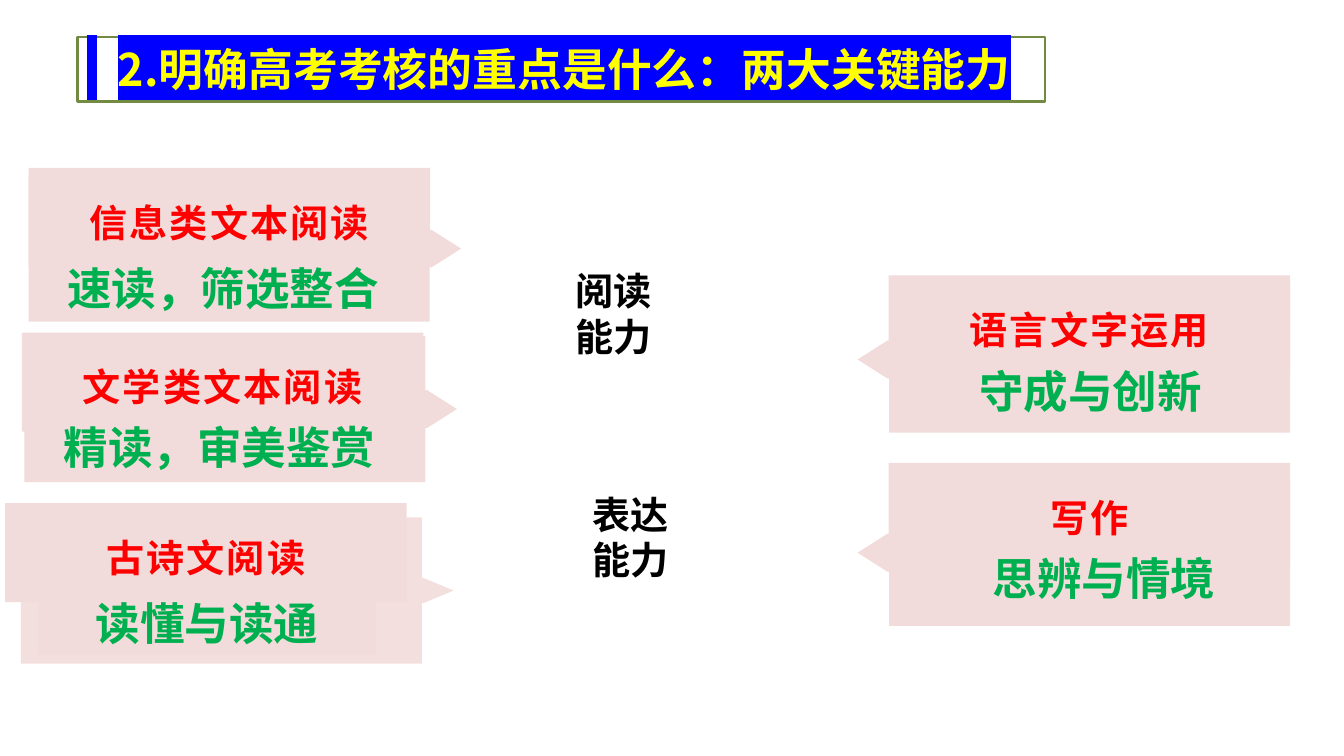
from dataclasses import dataclass

from lxml import etree
from pptx import Presentation
from pptx.dml.color import RGBColor
from pptx.enum.shapes import MSO_SHAPE
from pptx.enum.text import MSO_ANCHOR, MSO_AUTO_SIZE, PP_ALIGN
from pptx.oxml.ns import qn
from pptx.shapes.autoshape import Shape
from pptx.slide import Slide
from pptx.util import Inches, Pt

RECT, OVAL = MSO_SHAPE.RECTANGLE, MSO_SHAPE.OVAL
CALLOUT = MSO_SHAPE.RIGHT_ARROW_CALLOUT
LEFT, CENTER = PP_ALIGN.LEFT, PP_ALIGN.CENTER
TOP, MIDDLE = MSO_ANCHOR.TOP, MSO_ANCHOR.MIDDLE
TITLE_ONLY = 5

# Grid of 160 columns by 90 rows
WIDTH, HEIGHT = Inches(13.33), Inches(7.5)
COL, ROW = WIDTH / 160, HEIGHT / 90

Point = tuple[float, float]


@dataclass(frozen=True)
class Theme:
    font: str = "Noto Sans CJK SC"
    pink: str = "F2DCDB"
    red: str = "FF0000"
    green: str = "00B050"
    black: str = "000000"
    white: str = "FFFFFF"
    yellow: str = "FFFF00"
    blue: str = "0000FF"
    olive: str = "738A42"
    title: float = 32
    skill: float = 31.8
    label: float = 27.2


@dataclass(frozen=True)
class Card:
    """A reading or writing task; points are grid positions."""
    task: str
    skill: str
    arrow: Point
    head: Point
    foot: Point
    flip: bool = False
    align: PP_ALIGN = CENTER
    wing: float = 0.129
    alpha: int = 100


@dataclass(frozen=True)
class Hub:
    text: str
    at: Point


THEME = Theme()
ARROW, HEAD, FOOT, RING = (51.5, 17.4), (47.8, 11.8), (40.1, 7.6), (21.4, 16.6)

CARDS = [
    Card("信息类文本阅读", "速读，筛选整合", (3.4, 20.9), (3.4, 20), (6.8, 30.5),
         align=LEFT),
    Card("文学类文本阅读", "精读，审美鉴赏", (2.9, 40), (2.6, 39.6), (6.4, 49.4),
         align=LEFT),
    Card("古诗文阅读", "读懂与读通", (2.5, 61.6), (0.6, 59.9), (4.6, 70.4),
         wing=0.085, alpha=90),
    Card("语言文字运用", "守成与创新", (102.1, 34.1), (105.8, 32.8), (109.8, 42.8),
         flip=True),
    Card("写作", "思辨与情境", (102.1, 57.1), (105.8, 55.1), (111.4, 65),
         flip=True),
]
HUBS = [Hub("阅读能力", (62.3, 29)), Hub("表达能力", (64.4, 55.6))]


def place(shape: Shape, at: Point, size: Point) -> None:
    shape.left, shape.top = int(at[0] * COL), int(at[1] * ROW)
    shape.width, shape.height = int(size[0] * COL), int(size[1] * ROW)


def draw(slide: Slide, kind: MSO_SHAPE, at: Point, size: Point,
         fill: str | None = None) -> Shape:
    shape = slide.shapes.add_shape(kind, 0, 0, 0, 0)
    place(shape, at, size)
    shape.shadow.inherit = False
    shape.line.fill.background()
    if fill:
        shape.fill.solid()
        shape.fill.fore_color.rgb = RGBColor.from_string(fill)
    else:
        shape.fill.background()
    return shape


def write(shape: Shape, parts: list[str], size: float, color: str,
          align: PP_ALIGN = CENTER, anchor: MSO_ANCHOR = MIDDLE,
          space: float = 0, mark: str = "") -> None:
    """Set one bold paragraph, with letter spacing and a highlight if given."""
    frame = shape.text_frame
    frame.word_wrap, frame.vertical_anchor = True, anchor
    para = frame.paragraphs[0]
    para.alignment = align
    font = para.font
    font.size, font.bold = Pt(size), True
    font.color.rgb = RGBColor.from_string(color)
    props = para._p.get_or_add_pPr().find(qn("a:defRPr"))
    if space:
        props.set("spc", str(int(space * 100)))
    if mark:
        light = etree.SubElement(props, qn("a:highlight"))
        etree.SubElement(light, qn("a:srgbClr"), val=mark)
    for script in ("a:latin", "a:ea"):
        etree.SubElement(props, qn(script), typeface=THEME.font)
    for part in parts:
        para.add_run().text = part


def add_title(slide: Slide) -> None:
    title = slide.shapes.title
    place(title, (9.2, 4.4), (115.2, 7.7))
    title.fill.solid()
    title.fill.fore_color.rgb = RGBColor.from_string(THEME.white)
    title.line.color.rgb = RGBColor.from_string(THEME.olive)
    title.line.width = Pt(2)
    write(title, [" ", "2.明确高考考核的重点是什么：两大关键能力"], THEME.title,
          THEME.yellow, LEFT, TOP, mark=THEME.blue)
    title.text_frame.auto_size = MSO_AUTO_SIZE.NONE
    # The wide first space carries the highlight to the left edge
    lead = title.text_frame.paragraphs[0].runs[0]
    lead._r.get_or_add_rPr().set("spc", "1440")


def add_card(slide: Slide, card: Card) -> None:
    arrow = draw(slide, CALLOUT, card.arrow, ARROW, THEME.pink)
    for i, share in enumerate((0.258, card.wing, 0.203, 0.927)):
        arrow.adjustments[i] = share
    if card.flip:
        arrow._element.spPr.find(qn("a:xfrm")).set("flipH", "1")
    if card.alpha < 100:
        tint = arrow._element.spPr.find(qn("a:solidFill"))[0]
        etree.SubElement(tint, qn("a:alpha"), val=str(card.alpha * 1000))
    head = draw(slide, RECT, card.head, HEAD, THEME.pink)
    write(head, [card.task], THEME.label, THEME.red, space=1.5)
    head.text_frame.paragraphs[0].line_spacing = 1.2
    foot = draw(slide, RECT, card.foot, FOOT, THEME.pink)
    write(foot, [card.skill], THEME.skill, THEME.green, card.align, TOP)


def main() -> None:
    deck = Presentation()
    deck.slide_width, deck.slide_height = WIDTH, HEIGHT
    slide = deck.slides.add_slide(deck.slide_layouts[TITLE_ONLY])
    add_title(slide)
    for card in CARDS:
        add_card(slide, card)
    for hub in HUBS:
        ring = draw(slide, OVAL, hub.at, RING)
        write(ring, [hub.text], THEME.label, THEME.black)
    deck.save("out.pptx")


if __name__ == "__main__":
    main()
